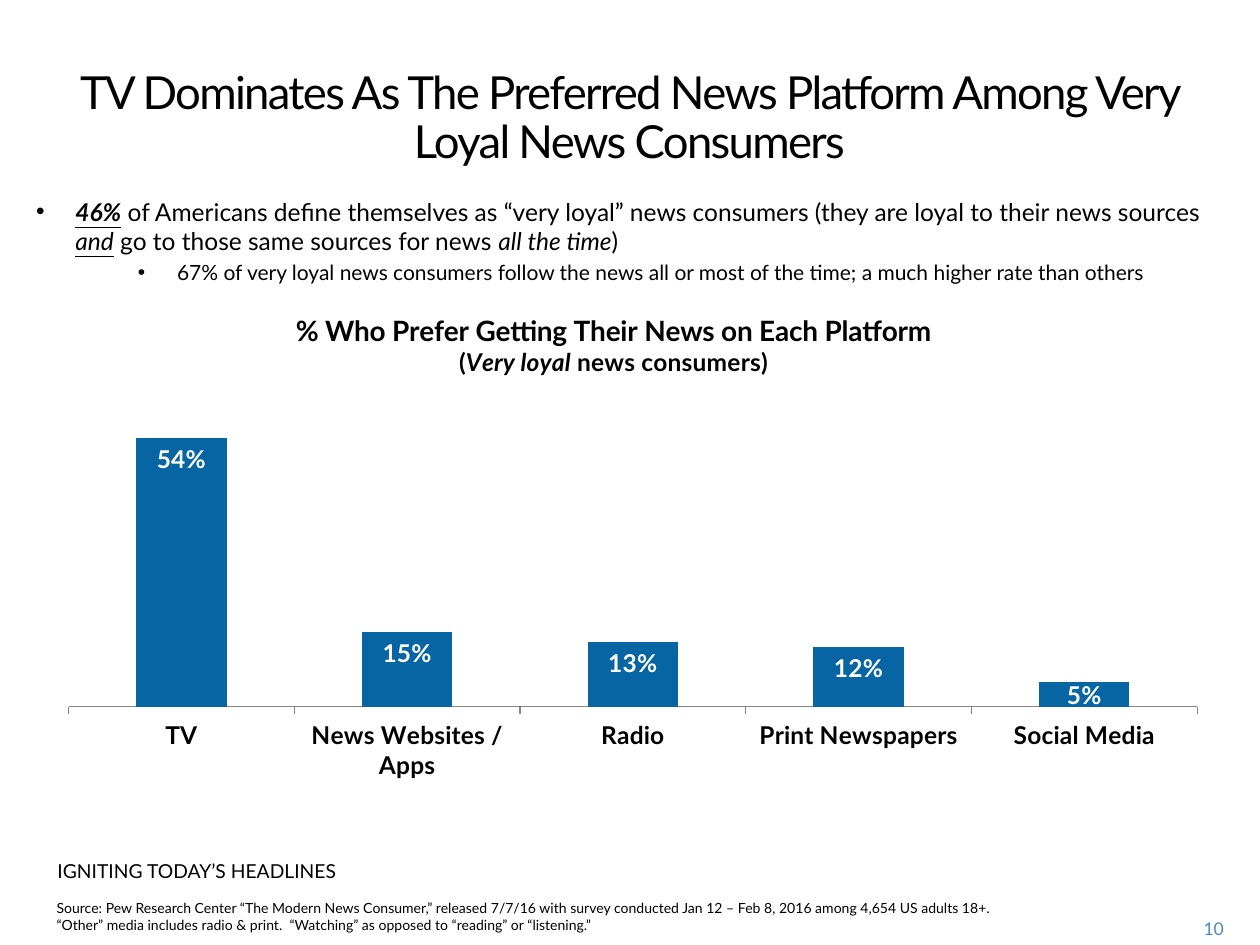
from lxml import etree
from pptx import Presentation
from pptx.chart.data import CategoryChartData
from pptx.dml.color import RGBColor
from pptx.enum.chart import XL_CHART_TYPE as ChartType
from pptx.enum.chart import XL_LABEL_POSITION as LabelPos
from pptx.enum.chart import XL_TICK_MARK as Tick
from pptx.enum.text import MSO_ANCHOR as Anchor
from pptx.enum.text import MSO_AUTO_SIZE as AutoSize
from pptx.enum.text import PP_ALIGN as Align
from pptx.oxml.ns import qn
from pptx.util import Cm, Pt

FONT = "Lato"
COLORS = {"text": "000000", "bar": "0765A3", "label": "FFFFFF",
          "axis": "868686", "number": "508ABA"}
PLATFORMS = {"TV": 0.54, "News Websites / Apps": 0.15, "Radio": 0.13,
             "Print Newspapers": 0.12, "Social Media": 0.05}
EMPHASIS = {"italic": True, "underline": True}
LOYALTY = [
    ("46%", {"bold": True, **EMPHASIS}),
    (" of Americans define themselves as “very loyal” news consumers "
     "(they are loyal to their news sources ", {}),
    ("and", EMPHASIS),
    (" go to those same sources for news ", {}),
    ("all the time", {"italic": True}),
    (")", {}),
]
FOLLOWING = [("67% of very loyal news consumers follow the news all or most of "
              "the time; a much higher rate than others", {})]
SOURCE = ("Source: Pew Research Center “The Modern News Consumer,” released 7/7/16 "
          "with survey conducted Jan 12 – Feb 8, 2016 among 4,654 US adults 18+.  "
          "“Other” media includes radio & print.  “Watching” as opposed to "
          "“reading” or “listening.”")


def rgb(name):
    return RGBColor.from_string(COLORS[name])


def style(font, size, color="text", **formats):
    font.color.rgb = rgb(color)
    for key, value in {"name": FONT, "size": Pt(size), **formats}.items():
        setattr(font, key, value)


def add_runs(p, runs, size, color="text", **formats):
    for text, extra in runs:
        r = p.add_run()
        r.text = text
        style(r.font, size, color, **{**formats, **extra})


def add_bullet(p, margin, hanging):
    pPr = p._p.get_or_add_pPr()
    pPr.set("marL", str(margin))
    pPr.set("indent", str(-hanging))
    etree.SubElement(pPr, qn("a:buFont")).set("typeface", "Arial")
    etree.SubElement(pPr, qn("a:buChar")).set("char", "•")


def add_text_box(s, box, **formats):
    tf = s.shapes.add_textbox(*map(Cm, box)).text_frame
    for key, value in {"word_wrap": True, **formats}.items():
        setattr(tf, key, value)
    return tf


def add_line(s, box, text, size, color="text", align=Align.LEFT, **formats):
    p = add_text_box(s, box, **formats).paragraphs[0]
    p.alignment = align
    add_runs(p, [(text, {})], size, color)


def add_title(s, box, text):
    title = s.shapes.title
    for key, value in zip(("left", "top", "width", "height"), box):
        setattr(title, key, Cm(value))
    tf = title.text_frame
    for key, value in {"word_wrap": True, "auto_size": AutoSize.NONE,
                       "vertical_anchor": Anchor.TOP}.items():
        setattr(tf, key, value)
    p = tf.paragraphs[0]
    p.alignment = Align.CENTER
    p.line_spacing = Pt(28)
    add_runs(p, [(text, {})], 26)
    p.runs[0].font._element.set("spc", "-100")


def add_findings(s, box):
    tf = add_text_box(s, box)
    p = tf.paragraphs[0]
    add_bullet(p, Cm(0.79), Cm(0.79))
    add_runs(p, LOYALTY, 14)
    p = tf.add_paragraph()
    p.level = 1
    p.space_before = Pt(2.4)
    add_bullet(p, Cm(2.84), Cm(0.79))
    add_runs(p, FOLLOWING, 12)


def set_layout(element, **places):
    layout = element.find(qn("c:layout"))
    if layout is None:
        layout = etree.Element(qn("c:layout"))
        element.insert(0, layout)
    manual = etree.SubElement(layout, qn("c:manualLayout"))
    for key, value in places.items():
        etree.SubElement(manual, qn(f"c:{key}")).set("val", str(value))


def add_chart_title(chart):
    chart.has_title = True
    title = chart.chart_title
    title.include_in_layout = False
    tf = title.text_frame
    add_runs(tf.paragraphs[0],
             [("% Who Prefer Getting Their News on Each Platform", {})], 16, bold=True)
    add_runs(tf.add_paragraph(), [("(", {}), ("Very loyal", {"italic": True}),
                                  (" news consumers)", {})], 14, bold=True)
    set_layout(title._element, xMode="edge", yMode="edge", x=0.21, y=0)


def add_value_labels(series):
    labels = series.data_labels
    for key, value in {"show_value": True, "position": LabelPos.INSIDE_END,
                       "number_format": "0%",
                       "number_format_is_linked": False}.items():
        setattr(labels, key, value)
    smallest = series.points[len(PLATFORMS) - 1].data_label
    smallest.position = LabelPos.CENTER
    for item in (labels, smallest):
        style(item.font, 14, "label", bold=True)


def add_platform_chart(s, box):
    data = CategoryChartData(number_format="0%")
    data.categories = list(PLATFORMS)
    data.add_series("Series 1", list(PLATFORMS.values()))
    chart = s.shapes.add_chart(ChartType.COLUMN_STACKED, *map(Cm, box), data).chart
    chart.has_legend = False
    style(chart.font, 11)
    add_chart_title(chart)

    plot = chart.plots[0]
    for key, value in {"gap_width": 150, "overlap": 100,
                       "vary_by_categories": False}.items():
        setattr(plot, key, value)
    series = plot.series[0]
    fill = series.format.fill
    fill.solid()
    fill.fore_color.rgb = rgb("bar")
    add_value_labels(series)

    for key, value in {"visible": False, "has_major_gridlines": False,
                       "minimum_scale": 0, "maximum_scale": 0.6}.items():
        setattr(chart.value_axis, key, value)
    axis = chart.category_axis
    axis.major_tick_mark = Tick.OUTSIDE
    axis.format.line.color.rgb = rgb("axis")
    style(axis.tick_labels.font, 14, bold=True)
    set_layout(chart._chartSpace.find(".//" + qn("c:plotArea")), layoutTarget="inner",
               xMode="edge", yMode="edge", x=0.02, y=0.21, w=0.96, h=0.62)


def main():
    prs = Presentation()
    prs.slide_width, prs.slide_height = Cm(25.4), Cm(19.05)
    s = prs.slides.add_slide(prs.slide_layouts[5])
    add_title(s, (0.46, 1.27, 24.46, 1.73),
              "TV Dominates As The Preferred News Platform Among Very Loyal News Consumers")
    add_platform_chart(s, (0.91, 6.2, 23.7, 9.7))
    add_line(s, (0.89, 18.01, 19.89, 0.58), SOURCE, 8)
    add_findings(s, (0.48, 3.84, 24.46, 1.78))
    add_line(s, (0.91, 17.2, 6.91, 1.19), "IGNITING TODAY’S HEADLINES", 11)
    add_line(s, (23.37, 18.39, 1.55, 0.64), "10", 10, "number", Align.RIGHT,
             vertical_anchor=Anchor.MIDDLE)
    prs.save("out.pptx")


if __name__ == "__main__":
    main()
